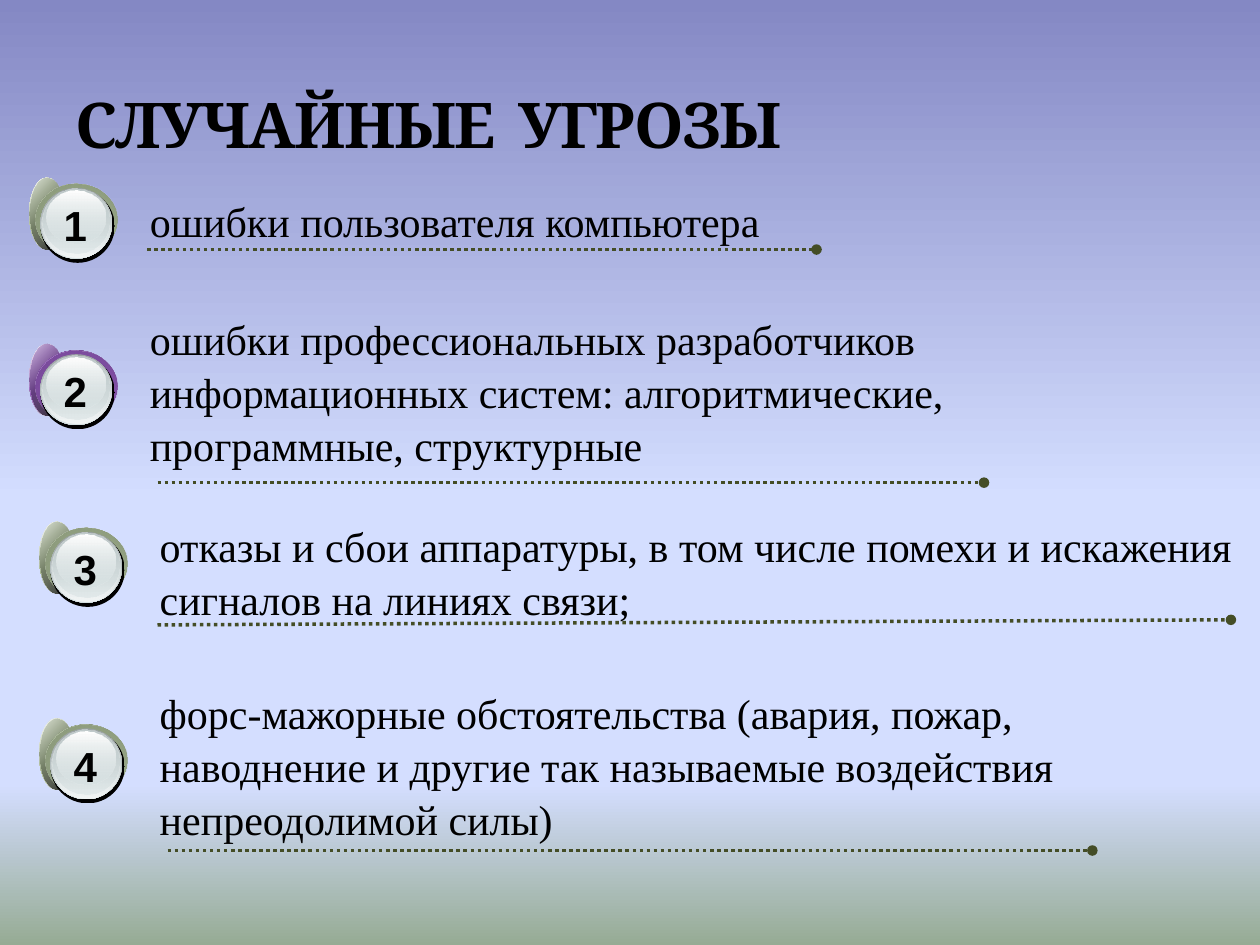
from lxml.etree import SubElement
from pptx import Presentation
from pptx.dml.color import RGBColor
from pptx.enum.dml import MSO_LINE
from pptx.enum.shapes import MSO_CONNECTOR, MSO_SHAPE
from pptx.enum.text import MSO_ANCHOR, PP_ALIGN
from pptx.oxml.ns import qn
from pptx.util import Pt

BLACK = RGBColor(0x00, 0x00, 0x00)
WHITE = RGBColor(0xFF, 0xFF, 0xFF)
OLIVE = RGBColor(0x44, 0x4D, 0x26)
SAGE = RGBColor(0x9C, 0xAD, 0x88)
SKY = RGBColor(0x84, 0x88, 0xC4)
PALE = RGBColor(0xD4, 0xDE, 0xFF)
MOSS = RGBColor(0x96, 0xAB, 0x94)
STEEL = RGBColor(0x99, 0xA1, 0xA2)
MIST = RGBColor(0xD6, 0xE1, 0xE2)
FROST = RGBColor(0xF2, 0xF5, 0xF5)
ASH = RGBColor(0xC1, 0xCB, 0xCC)
# Main tint, rim and shade of a badge
GREEN = (RGBColor(0xA5, 0xB5, 0x92), RGBColor(0x7E, 0x8B, 0x70), RGBColor(0x87, 0x95, 0x78))
PURPLE = (RGBColor(0x8E, 0x58, 0xB6), RGBColor(0x6D, 0x43, 0x8B), RGBColor(0x75, 0x48, 0x95))

HEAD = {"name": "Cambria", "size": Pt(36), "bold": True}
BODY = {"name": "Times New Roman", "size": Pt(24)}
DIGIT = {"name": "Arial", "size": Pt(24), "bold": True}

# Badge corner, tint, text box, text, rule from and to
ITEMS = [
    ((16.6, 101.5), GREEN, (78.5, 106.6, 624, 65.5),
     "ошибки пользователя компьютера",
     (84.2, 142.6, 466.6, 142.6)),
    ((16.6, 196.6), PURPLE, (78.5, 174.2, 618.5, 94.3),
     "ошибки профессиональных разработчиков информационных систем: "
     "алгоритмические, программные, структурные",
     (90, 275.8, 562.3, 275.8)),
    ((22.3, 298.1), GREEN, (84.2, 292.3, 635.8, 124),
     "отказы и сбои аппаратуры, в том числе помехи и искажения "
     "сигналов на линиях связи;",
     (90, 357.1, 703.4, 354.2)),
    ((22.3, 410.4), GREEN, (84.2, 388.1, 613.4, 94.3),
     "форс-мажорные обстоятельства (авария, пожар, наводнение и другие "
     "так называемые воздействия непреодолимой силы)",
     (95.8, 486, 624.2, 486)),
]


def blend(fill, owner, angle, stops):
    """Fill with a gradient of (place, colour[, opacity]) stops, in percent."""
    fill.gradient()
    grad = owner.find(qn("a:gradFill"))
    for child in list(grad):
        grad.remove(child)
    row = SubElement(grad, qn("a:gsLst"))
    for place, color, *alpha in stops:
        stop = SubElement(row, qn("a:gs"), pos=str(place * 1000))
        tint = SubElement(stop, qn("a:srgbClr"), val=str(color))
        for value in alpha:
            SubElement(tint, qn("a:alpha"), val=str(value * 1000))
    SubElement(grad, qn("a:lin"), ang=str(angle * 60000), scaled="0")


def layers(main, rim, shade):
    """Ellipses of a badge, back to front: offset and size, angle, stops."""
    leaf, ring = (0, 0, 20.2, 41), (3.6, 3.6, 46.8, 41)
    return [
        (leaf, 45, [(0, WHITE), (50, main), (100, WHITE)]),
        (leaf, 45, [(0, main, 32), (100, BLACK, 90)]),
        (ring, 315, [(0, rim), (50, main), (100, rim)]),
        (ring, 45, [(0, shade), (100, main, 0)]),
        ((6.5, 6.7, 42.5, 42), 0, [(0, BLACK), (100, BLACK)]),
        ((6.5, 5.8, 41, 40.5), 90, [(0, STEEL), (100, MIST)]),
        ((7.2, 6, 39.6, 39.6), 90, [(0, MIST, 0), (100, FROST)]),
        ((7.7, 6.5, 38.2, 36.9), 90, [(0, ASH), (100, MIST, 48)]),
        ((10.1, 7.5, 33.8, 30.2), 90, [(0, WHITE), (100, MIST, 38)]),
    ]


class Deck:
    def __init__(self):
        self.show = Presentation()
        self.show.slide_width, self.show.slide_height = Pt(720), Pt(540)
        self.slide = self.show.slides.add_slide(self.show.slide_layouts[6])
        self.shapes = self.slide.shapes

    def back(self, stops):
        fill = self.slide.background.fill
        fill.solid()
        blend(fill, self.slide.element.xpath(".//p:bgPr")[0], 90, stops)

    def text(self, box, words, style, home=None, space=None, **frame):
        """Add a text box, to a group if home is given; return its run."""
        shape = (home or self.shapes).add_textbox(*map(Pt, box))
        for name, value in {"word_wrap": True, **frame}.items():
            setattr(shape.text_frame, name, value)
        para = shape.text_frame.paragraphs[0]
        para.alignment = PP_ALIGN.CENTER if home else PP_ALIGN.LEFT
        para.line_spacing = space
        run = para.add_run()
        run.text = words
        for name, value in style.items():
            setattr(run.font, name, value)
        run.font.color.rgb = BLACK
        return run

    def title(self, box, words):
        run = self.text(box, words, HEAD, vertical_anchor=MSO_ANCHOR.BOTTOM)
        props = run.font._element
        props.set("spc", "-100")
        line = props.makeelement(qn("a:ln"), {"w": str(Pt(0.83))})
        fill = SubElement(line, qn("a:solidFill"))
        SubElement(fill, qn("a:srgbClr"), val=str(SAGE))
        props.insert(0, line)

    def badge(self, spot, tint, label):
        left, top = spot
        home = self.shapes.add_group_shape().shapes
        for (x, y, wide, high), angle, stops in layers(*tint):
            box = map(Pt, (left + x, top + y, wide, high))
            oval = home.add_shape(MSO_SHAPE.OVAL, *box)
            oval.shadow.inherit = False
            oval.line.fill.background()
            blend(oval.fill, oval._element.spPr, angle, stops)
        self.text((left + 12.4, top + 9, 28, 36), label, DIGIT, home, word_wrap=False)

    def rule(self, ends):
        """Add a dotted line that ends in a dot."""
        wire = self.shapes.add_connector(MSO_CONNECTOR.STRAIGHT, *map(Pt, ends))
        wire.line.color.rgb = OLIVE
        look = {"width": Pt(2), "dash_style": MSO_LINE.ROUND_DOT}
        for name, value in look.items():
            setattr(wire.line, name, value)
        SubElement(wire.line._ln, qn("a:tailEnd"), type="oval")
        SubElement(wire._element.spPr, qn("a:effectLst"))


def main():
    deck = Deck()
    deck.back([(0, SKY), (53, PALE), (83, PALE), (100, MOSS)])
    deck.title((36, 12.2, 648, 83.5), "СЛУЧАЙНЫЕ  УГРОЗЫ")
    for count, (spot, tint, box, words, ends) in enumerate(ITEMS, 1):
        deck.rule(ends)
        deck.text(box, words, BODY, space=1.05)
        deck.badge(spot, tint, str(count))
    deck.show.save("out.pptx")


if __name__ == "__main__":
    main()
